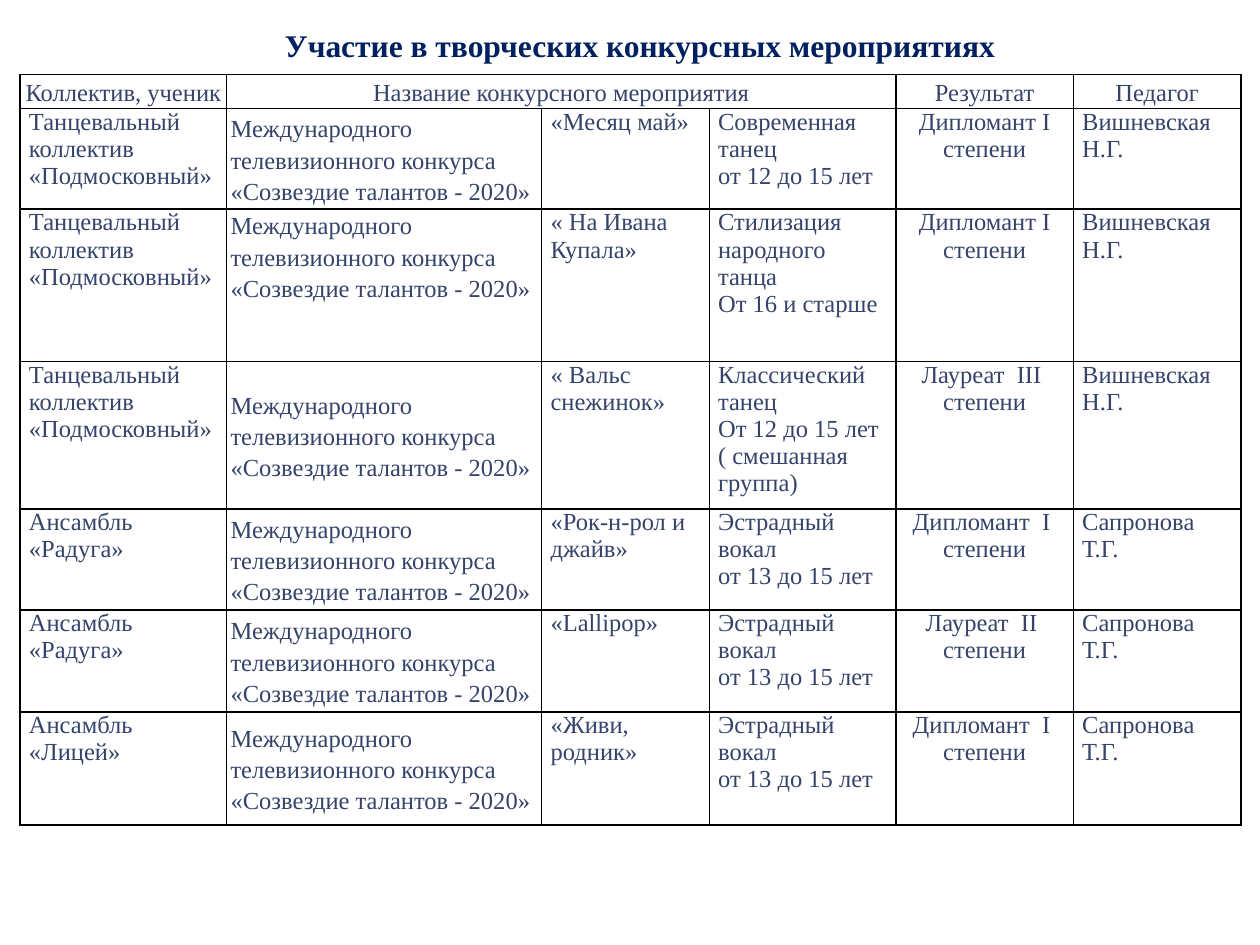
from lxml import etree
from pptx import Presentation, util as u
from pptx.dml.color import RGBColor
from pptx.enum import text as t
from pptx.oxml.ns import qn

NAVY = RGBColor(0x00, 0x20, 0x60)
SLATE = RGBColor(0x35, 0x43, 0x6A)
WHITE = RGBColor(0xFF, 0xFF, 0xFF)
BLACK = RGBColor(0x00, 0x00, 0x00)
FONT = "Times New Roman"

COLUMNS = [1.64, 2.5, 1.33, 1.48, 1.41, 1.33]
ROWS = [0.27, 0.8, 1.21, 1.17, 0.8, 0.81, 0.9]
LEFT, TOP = 0.16, 0.59
CONTEST_COLUMN, RESULT_COLUMN = 1, 4
LOOSE_ROW = 2  # its contest name stands at the top of the cell

HEADER = ["Коллектив, ученик", "Название конкурсного мероприятия", "", "",
          "Результат", "Педагог"]
CONTEST = "Международного телевизионного конкурса «Созвездие талантов - 2020»"
DANCERS = "Танцевальный коллектив «Подмосковный»"
RAINBOW = "Ансамбль «Радуга»"
DANCE_TEACHER, VOCAL_TEACHER = "Вишневская Н.Г.", "Сапронова Т.Г."
VOCAL = ["Эстрадный вокал\nот 13 до 15 лет"]
# group, piece, category paragraphs, result, teacher
ENTRIES = [
    (DANCERS, "«Месяц май»", ["Современная танец", "от 12 до 15 лет"],
     "Дипломант I степени", DANCE_TEACHER),
    (DANCERS, "« На Ивана Купала»", ["Стилизация народного танца", "От 16 и старше"],
     "Дипломант I степени", DANCE_TEACHER),
    (DANCERS, "« Вальс снежинок»",
     ["Классический танец", "От 12 до 15 лет ( смешанная группа)"],
     "Лауреат  III  степени", DANCE_TEACHER),
    (RAINBOW, "«Рок-н-рол и джайв»", VOCAL, "Дипломант  I  степени", VOCAL_TEACHER),
    (RAINBOW, "«Lallipop»", VOCAL, "Лауреат  II  степени", VOCAL_TEACHER),
    ("Ансамбль «Лицей»", "«Живи, родник»", VOCAL, "Дипломант  I  степени", VOCAL_TEACHER),
]


def add_span(para, words, size, colour, bold=False):
    span = para.add_run()
    span.text = words
    span.font.name = FONT
    span.font.size = u.Pt(size)
    span.font.bold = bold
    span.font.color.rgb = colour


def draw_borders(cell):
    """Put a thin black line on all four sides, ahead of the cell's fill."""
    properties = cell._tc.get_or_add_tcPr()
    for place, side in enumerate(("lnL", "lnR", "lnT", "lnB")):
        line = etree.Element(qn(f"a:{side}"), w=str(u.Pt(1)))
        fill = etree.SubElement(line, qn("a:solidFill"))
        etree.SubElement(fill, qn("a:srgbClr"), val=str(BLACK))
        properties.insert(place, line)


def style_cell(cell, inset, anchor):
    cell.margin_left = cell.margin_right = u.Inches(inset)
    cell.margin_top = cell.margin_bottom = 0
    cell.vertical_anchor = anchor
    cell.fill.solid()
    cell.fill.fore_color.rgb = WHITE
    draw_borders(cell)


def fill_cell(cell, paragraphs, centred, spaced):
    for number, content in enumerate(paragraphs):
        frame = cell.text_frame
        para = frame.add_paragraph() if number else frame.paragraphs[0]
        para.alignment = t.PP_ALIGN.CENTER if centred else t.PP_ALIGN.LEFT
        if spaced:
            para.line_spacing = 1.15
            para.space_after = u.Pt(10)
        for row, words in enumerate(content.split("\n")):
            if row:
                para.add_line_break()
            if words:
                add_span(para, words, 14, SLATE)


def add_results_table(page):
    frame = page.shapes.add_table(len(ROWS), len(COLUMNS), u.Inches(LEFT), u.Inches(TOP),
                                  u.Inches(sum(COLUMNS)), u.Inches(sum(ROWS)))
    table = frame.table
    table.first_row = table.horz_banding = False
    for column, width in zip(table.columns, COLUMNS):
        column.width = u.Inches(width)
    for row, height in zip(table.rows, ROWS):
        row.height = u.Inches(height)

    table.cell(0, 1).merge(table.cell(0, 3))
    lines = [[[title] for title in HEADER]]
    for group, piece, category, result, teacher in ENTRIES:
        lines.append([[group], [CONTEST], [piece], category, [result], [teacher]])

    for r, line in enumerate(lines):
        for c, paragraphs in enumerate(line):
            cell = table.cell(r, c)
            spaced = r == 0 or c == CONTEST_COLUMN
            middle = spaced and r != LOOSE_ROW
            anchor = t.MSO_ANCHOR.MIDDLE if middle else t.MSO_ANCHOR.TOP
            style_cell(cell, 0.03 if spaced else 0.07, anchor)
            if not cell.is_spanned:
                fill_cell(cell, paragraphs, r == 0 or c == RESULT_COLUMN, spaced)


def add_title(page):
    box = page.shapes.add_textbox(u.Inches(1.25), u.Inches(0.16), u.Inches(7.66), u.Inches(0.4))
    frame = box.text_frame
    frame.word_wrap = True
    frame.auto_size = t.MSO_AUTO_SIZE.SHAPE_TO_FIT_TEXT
    para = frame.paragraphs[0]
    para.alignment = t.PP_ALIGN.CENTER
    add_span(para, "Участие в творческих конкурсных мероприятиях", 18, NAVY, bold=True)


def main():
    deck = Presentation()
    deck.slide_width, deck.slide_height = u.Inches(10), u.Inches(7.5)
    page = deck.slides.add_slide(deck.slide_layouts[6])
    add_results_table(page)
    add_title(page)
    deck.save("out.pptx")


if __name__ == "__main__":
    main()
